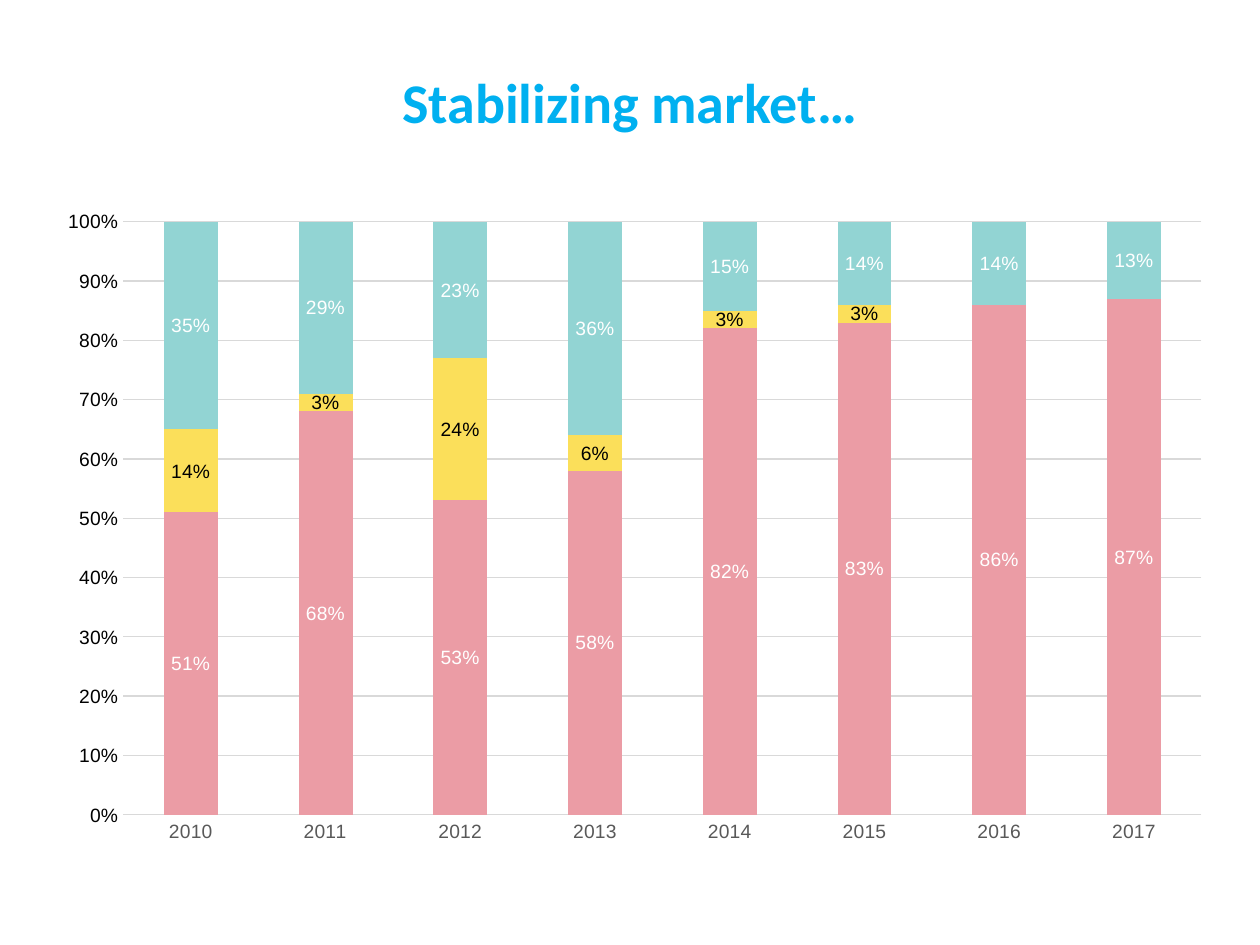
import pptx
import pptx.chart.data
import pptx.dml.color
import pptx.enum.chart
import pptx.enum.text
import pptx.oxml
import pptx.oxml.ns
import pptx.util
from pptx.util import Cm

YEARS = [str(year) for year in range(2010, 2018)]
# name, fill, label colour, shares by year
SHARES = [
    ("Series 1", "EB9CA5", "FFFFFF", [0.51, 0.68, 0.53, 0.58, 0.82, 0.83, 0.86, 0.87]),
    ("Series 2", "FBDF5A", "000000", [0.14, 0.03, 0.24, 0.06, 0.03, 0.03, 0, 0]),
    ("Series 3", "92D4D3", "FFFFFF", [0.35, 0.29, 0.23, 0.36, 0.15, 0.14, 0.14, 0.13]),
]
GRID_COLOR = "D9D9D9"


def rgb(hex_color):
    return pptx.dml.color.RGBColor.from_string(hex_color)


def style_font(font, name, size, color, bold=False):
    font.name = name
    font.size = pptx.util.Pt(size)
    font.bold = bold
    font.color.rgb = rgb(color)


def style_line(line):
    line.color.rgb = rgb(GRID_COLOR)
    line.width = pptx.util.Pt(0.75)


def set_plot_area(chart, x, y, w, h):
    """Fix the inner plot area, in fractions of the chart's box."""
    plot_area = chart.element.find(".//" + pptx.oxml.ns.qn("c:plotArea"))
    for old_layout in plot_area.findall(pptx.oxml.ns.qn("c:layout")):
        plot_area.remove(old_layout)
    sizes = "".join(
        f'<c:{tag} val="{size}"/>' for tag, size in zip("xywh", (x, y, w, h))
    )
    plot_area.insert(0, pptx.oxml.parse_xml(
        f'<c:layout {pptx.oxml.ns.nsdecls("c")}><c:manualLayout>'
        '<c:layoutTarget val="inner"/><c:xMode val="edge"/><c:yMode val="edge"/>'
        f'{sizes}</c:manualLayout></c:layout>'
    ))


def add_title(slide, left, top, width, height):
    title = slide.shapes.add_textbox(left, top, width, height).text_frame
    title.word_wrap = True
    title.vertical_anchor = pptx.enum.text.MSO_ANCHOR.BOTTOM
    title.text = "Stabilizing market…"
    heading = title.paragraphs[0]
    heading.alignment = pptx.enum.text.PP_ALIGN.CENTER
    style_font(heading.runs[0].font, "Calibri", 32, "00B0F0", bold=True)


def style_axes(chart):
    no_tick = pptx.enum.chart.XL_TICK_MARK.NONE
    years, percent = chart.category_axis, chart.value_axis
    for axis, color in ((years, "595959"), (percent, "000000")):
        axis.major_tick_mark = axis.minor_tick_mark = no_tick
        style_font(axis.tick_labels.font, "Arial", 11, color)
    style_line(years.format.line)
    percent.format.line.fill.background()
    percent.minimum_scale, percent.maximum_scale = 0, 1
    percent.major_unit = 0.1
    percent.has_major_gridlines = True
    style_line(percent.major_gridlines.format.line)
    percent.tick_labels.number_format = "0%"
    percent.tick_labels.number_format_is_linked = False


def add_share_chart(slide, left, top, width, height):
    shares = pptx.chart.data.CategoryChartData(number_format="0%")
    shares.categories = YEARS
    for name, _, _, values in SHARES:
        shares.add_series(name, values)
    chart = slide.shapes.add_chart(
        pptx.enum.chart.XL_CHART_TYPE.COLUMN_STACKED, left, top, width, height, shares
    ).chart
    chart.has_title = chart.has_legend = False
    style_font(chart.font, "Arial", 10, "000000")
    set_plot_area(chart, 0.067, 0.123, 0.922, 0.665)
    style_axes(chart)

    columns = chart.plots[0]
    columns.gap_width, columns.overlap = 150, 100
    columns.vary_by_categories = False
    for series, (_, fill, label_color, _) in zip(columns.series, SHARES):
        series.format.fill.solid()
        series.format.fill.fore_color.rgb = rgb(fill)
        labels = series.data_labels
        labels.show_value = True
        labels.number_format = "0%;;"  # zero shares get no label
        labels.number_format_is_linked = False
        style_font(labels.font, "Arial", 11, label_color)


def main():
    deck = pptx.Presentation()
    deck.slide_width, deck.slide_height = Cm(25.4), Cm(19.05)
    slide = deck.slides.add_slide(deck.slide_layouts[6])
    add_share_chart(slide, Cm(0.91), Cm(2.26), Cm(23.57), Cm(17.98))
    add_title(slide, 0, Cm(0.41), deck.slide_width, Cm(2.44))
    deck.save("out.pptx")


if __name__ == "__main__":
    main()
